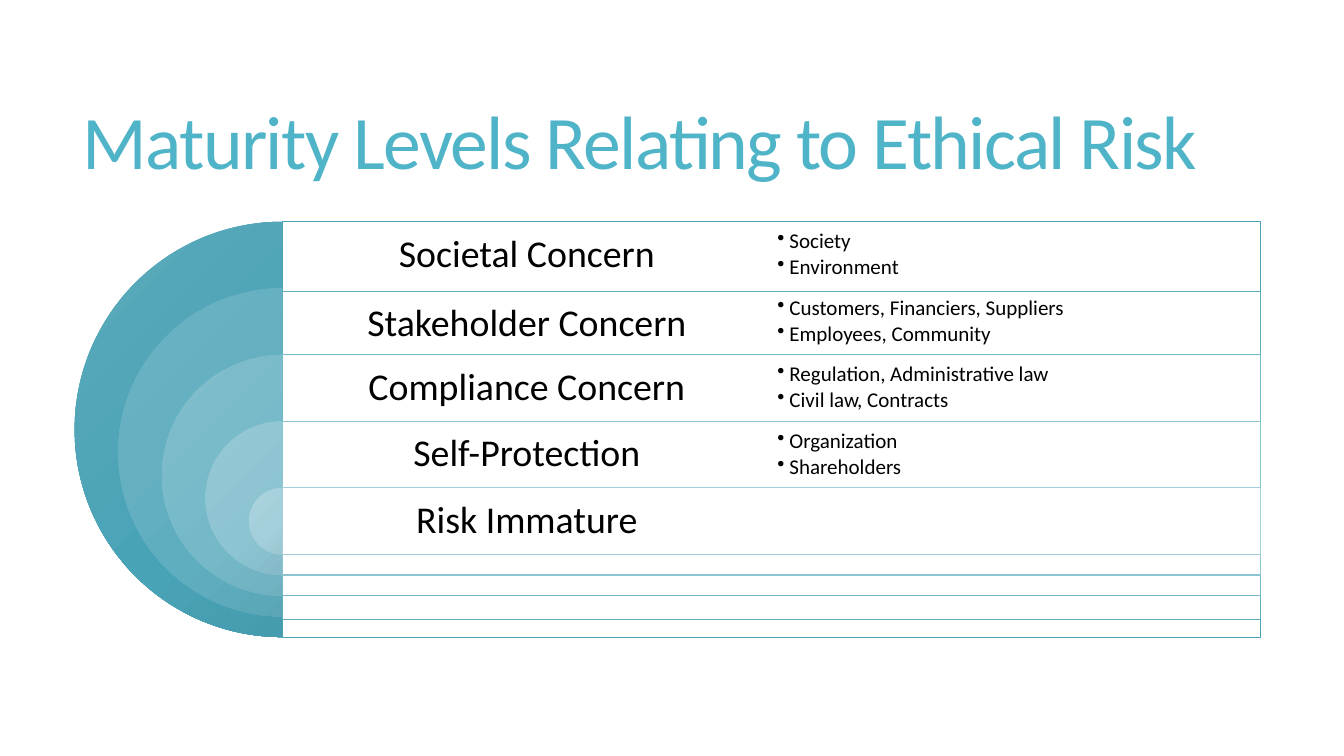
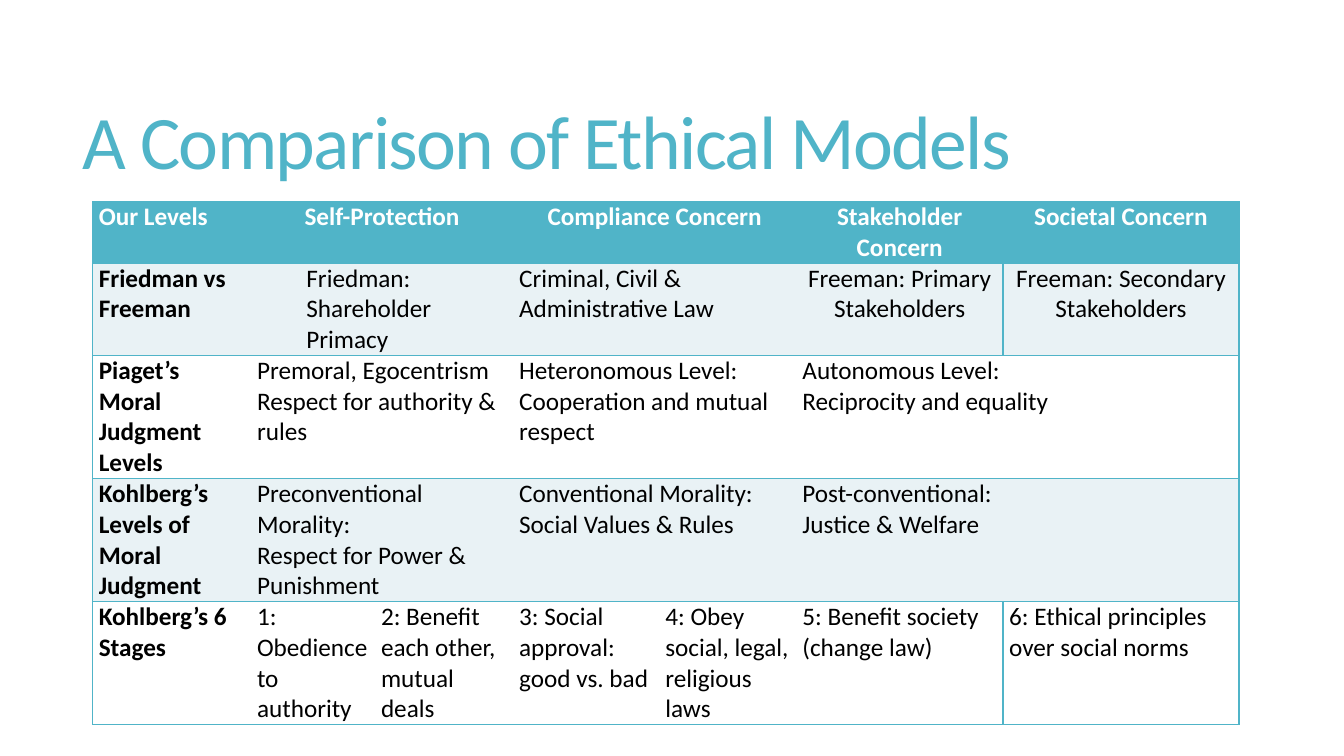
from lxml.etree import SubElement
from pptx import Presentation
from pptx.dml.color import RGBColor
from pptx.enum.shapes import MSO_SHAPE as Shape
from pptx.enum.text import MSO_ANCHOR as Anchor, MSO_AUTO_SIZE as AutoSize, PP_ALIGN as Align
from pptx.oxml import parse_xml
from pptx.oxml.ns import nsdecls, qn
from pptx.util import Inches, Pt

FONT = "Calibri"
COLORS = {
    "accent": "50B4C8",
    "text": "000000",
    "paper": "FFFFFF",
    "band": "E9F2F5",
}

STACK_LEFT, STACK_TOP = 2.8, 2.2
ROW_HEIGHT, HALF_WIDTH = 0.66, 4.85
OUTER_SIZE, SIZE_STEP = 4.12, 0.865

LEVELS = [
    ("Societal Concern", ["Society", "Environment"], ["5BA9BA", "49A3B6", "4193A3"], 0),
    ("Stakeholder Concern", ["Customers, Financiers, Suppliers", "Employees, Community"],
     ["6DB3C3", "5FAEBF", "549DAD"], 0.03),
    ("Compliance Concern", ["Regulation, Administrative law", "Civil law, Contracts"],
     ["81BECC", "75B9C8", "68A6B5"], 0),
    ("Self-Protection", ["Organization", "Shareholders"], ["96C8D5", "8CC4D1", "7DB0BD"], 0),
    ("Risk Immature", [], ["ACD3DE", "A2CFDB", "91BAC5"], 0),
]

COLUMN_WIDTHS = [1.57, 0.49, 0.74, 1.37, 1.45, 1.36, 2.05, 2.34]
ROW_HEIGHTS = [0.56, 0.84, 1.12, 1.12, 1.12]
MODEL_ROWS = [
    [("Our Levels", 1, Align.LEFT), ("Self-Protection", 3, Align.CENTER),
     ("Compliance Concern", 2, Align.CENTER), ("Stakeholder Concern", 1, Align.CENTER),
     ("Societal Concern", 1, Align.CENTER)],
    [("Friedman vs Freeman", 1, Align.LEFT), ("", 1, Align.LEFT),
     ("Friedman: Shareholder Primacy", 2, Align.LEFT),
     ("Criminal, Civil & Administrative Law", 2, Align.LEFT),
     ("Freeman: Primary Stakeholders", 1, Align.CENTER),
     ("Freeman: Secondary Stakeholders", 1, Align.CENTER)],
    [("Piaget’s Moral Judgment Levels", 1, Align.LEFT),
     ("Premoral, Egocentrism\nRespect for authority & rules", 3, Align.LEFT),
     ("Heteronomous Level:\nCooperation and mutual respect", 2, Align.LEFT),
     ("Autonomous Level:\vReciprocity and equality", 2, Align.LEFT)],
    [("Kohlberg’s Levels of Moral Judgment", 1, Align.LEFT),
     ("Preconventional Morality:\nRespect for Power & Punishment", 3, Align.LEFT),
     ("Conventional Morality:\nSocial Values & Rules", 2, Align.LEFT),
     ("Post-conventional:\nJustice & Welfare", 2, Align.LEFT)],
    [("Kohlberg’s 6 Stages", 1, Align.LEFT), ("1: Obedience to authority", 2, Align.LEFT),
     ("2: Benefit each other, mutual deals", 1, Align.LEFT),
     ("3: Social approval: good vs. bad", 1, Align.LEFT),
     ("4: Obey social, legal, religious laws", 1, Align.LEFT),
     ("5: Benefit society (change law)", 1, Align.LEFT),
     ("6: Ethical principles over social norms", 1, Align.LEFT)],
]


def rgb(name):
    return RGBColor.from_string(COLORS.get(name, name))


def box(left, top, width, height):
    return [Inches(length) for length in (left, top, width, height)]


def style_font(paragraph, size, color="text", bold=False):
    font = paragraph.font
    font.name, font.size, font.bold = FONT, Pt(size), bold
    font.color.rgb = rgb(color)


def add_titled_slide(prs, heading):
    slide = prs.slides.add_slide(prs.slide_layouts[5])
    title = slide.shapes.title
    title.left, title.top, title.width, title.height = box(0.72, 0.55, 11.78, 1.81)
    frame = title.text_frame
    frame.text = heading
    frame.auto_size, frame.vertical_anchor = AutoSize.NONE, Anchor.MIDDLE
    paragraph = frame.paragraphs[0]
    paragraph.alignment, paragraph.line_spacing = Align.LEFT, 0.85
    style_font(paragraph, 54, "accent")
    paragraph.runs[0].font._element.set("spc", "-120")
    return slide


def add_half_disc(slide, center_x, top, size, shades):
    disc = slide.shapes.add_shape(Shape.PIE, *box(center_x - size / 2, top, size, size))
    disc.adjustments[0], disc.adjustments[1] = 54, 162
    disc.shadow.inherit = False
    disc.line.fill.background()
    stops = "".join(
        f'<a:gs pos="{index * 50000}"><a:srgbClr val="{shade}"/></a:gs>'
        for index, shade in enumerate(shades))
    gradient = parse_xml(
        f'<a:gradFill {nsdecls("a")} rotWithShape="1"><a:gsLst>{stops}</a:gsLst>'
        '<a:lin ang="2700000" scaled="0"/></a:gradFill>')
    disc._element.spPr.find(qn("a:prstGeom")).addnext(gradient)


def add_panel(slide, left, top, width, height, outline):
    panel = slide.shapes.add_shape(Shape.RECTANGLE, *box(left, top, width, height))
    panel.shadow.inherit = False
    panel.fill.solid()
    panel.fill.fore_color.rgb = rgb("paper")
    paper = panel._element.spPr.find(qn("a:solidFill")).find(qn("a:srgbClr"))
    SubElement(paper, qn("a:alpha"), val="90000")
    panel.line.color.rgb = rgb(outline)
    panel.line.width = Pt(0.75)


def add_text(slide, left, top, lines, size, inset, space_after, bulleted=False):
    frame = slide.shapes.add_textbox(*box(left, top, HALF_WIDTH, ROW_HEIGHT)).text_frame
    frame.word_wrap, frame.vertical_anchor = True, Anchor.MIDDLE
    frame.margin_left = frame.margin_right = Inches(inset)
    frame.margin_top = frame.margin_bottom = Inches(inset)
    frame.text = "\n".join(lines)
    for paragraph in frame.paragraphs:
        if bulleted:
            add_bullet(paragraph)
        else:
            paragraph.alignment = Align.CENTER
        paragraph.line_spacing, paragraph.space_after = 0.9, Pt(size * space_after)
        style_font(paragraph, size)


def add_bullet(paragraph):
    properties = paragraph._p.get_or_add_pPr()
    properties.set("marL", str(Inches(0.12)))
    properties.set("indent", str(Inches(-0.12)))
    SubElement(properties, qn("a:buChar"), char="•")


def add_level(slide, index, name, concerns, shades, nudge):
    row_top = STACK_TOP + index * ROW_HEIGHT
    size = OUTER_SIZE - index * SIZE_STEP
    add_half_disc(slide, STACK_LEFT, row_top, size, shades)
    add_panel(slide, STACK_LEFT, row_top + nudge, 2 * HALF_WIDTH, size, shades[1])
    add_text(slide, STACK_LEFT, row_top + nudge, [name], 27, 0.11, 0.35)
    if concerns:
        add_text(slide, STACK_LEFT + HALF_WIDTH, row_top, concerns, 15, 0.06, 0.15, True)


def set_borders(cell, sides):
    properties = cell._tc.get_or_add_tcPr()
    for position, side in enumerate(sides):
        properties.insert(position, parse_xml(
            f'<a:ln{side} {nsdecls("a")} w="12700"><a:solidFill>'
            f'<a:srgbClr val="{COLORS["accent"]}"/></a:solidFill></a:ln{side}>'))


def fill_cell(cell, text, alignment, fill, color, bold):
    cell.text = text
    cell.margin_left = cell.margin_right = Inches(0.06)
    cell.margin_top = cell.margin_bottom = 0
    cell.fill.solid()
    cell.fill.fore_color.rgb = rgb(fill)
    for paragraph in cell.text_frame.paragraphs:
        paragraph.alignment = alignment
        style_font(paragraph, 18, color, bold)


def add_model_table(slide):
    table = slide.shapes.add_table(
        len(ROW_HEIGHTS), len(COLUMN_WIDTHS),
        *box(0.92, 2, sum(COLUMN_WIDTHS), sum(ROW_HEIGHTS))).table
    table.first_row = table.horz_banding = False
    table._tbl.tblPr.find(qn("a:tableStyleId")).text = "{2D5ABB26-0587-4C30-8999-92F81FD0307C}"
    for column, width in zip(table.columns, COLUMN_WIDTHS):
        column.width = Inches(width)
    last = len(COLUMN_WIDTHS) - 1
    for row, (height, entries) in enumerate(zip(ROW_HEIGHTS, MODEL_ROWS)):
        table.rows[row].height = Inches(height)
        fill = "accent" if row == 0 else "band" if row % 2 else "paper"
        color = "paper" if row == 0 else "text"
        start = 0
        for text, span, alignment in entries:
            end = start + span - 1
            cell = table.cell(row, start)
            if span > 1:
                cell.merge(table.cell(row, end))
            fill_cell(cell, text, alignment, fill, color, row == 0 or start == 0)
            for column in range(start, end + 1):
                left = "L" if column == 0 or start == last else ""
                right = "R" if end == last else ""
                set_borders(table.cell(row, column), left + right + "TB")
            start = end + 1


def main():
    prs = Presentation()
    prs.slide_width, prs.slide_height = Inches(13.33), Inches(7.5)
    maturity = add_titled_slide(prs, "Maturity Levels Relating to Ethical Risk")
    for index, level in enumerate(LEVELS):
        add_level(maturity, index, *level)
    comparison = add_titled_slide(prs, "A Comparison of Ethical Models")
    add_model_table(comparison)
    prs.save("out.pptx")


if __name__ == "__main__":
    main()
